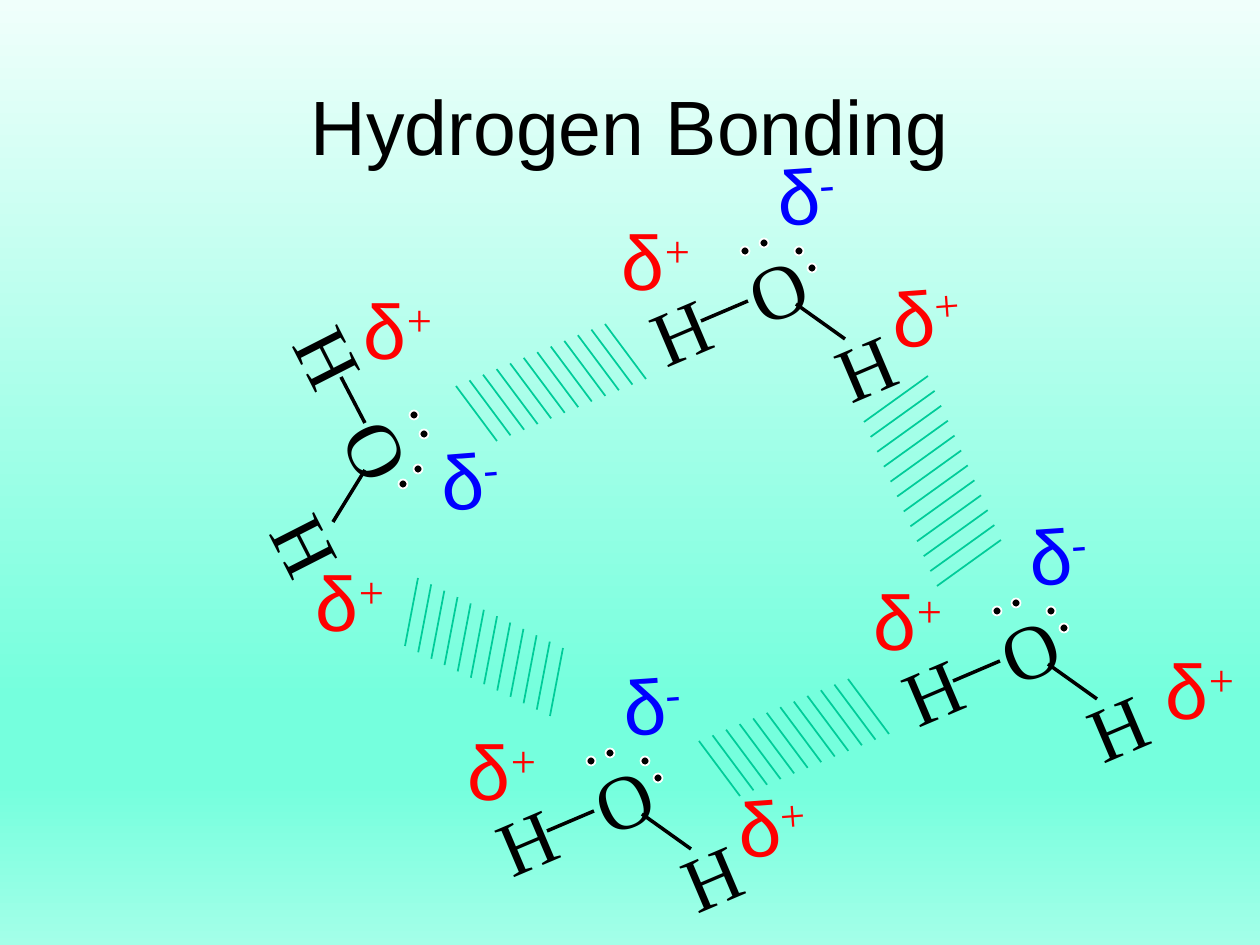
"""Build a slide on hydrogen bonding between four water molecules."""
from dataclasses import dataclass

from pptx import Presentation
from pptx import util as u
from pptx.dml.color import RGBColor
from pptx.enum import shapes, text
from pptx.oxml import ns
from pptx.oxml.xmlchemy import OxmlElement


@dataclass(frozen=True)
class Theme:
    """Colours, fonts and sizes used on the slide."""
    ink: str = "000000"
    halo: str = "FFFFFF"
    positive: str = "FF0000"
    negative: str = "0000FF"
    hydrogen_bond: str = "00CC99"
    backdrop: tuple = ((0, "F0FFFB"), (74, "75FFDD"), (83, "75FFDD"), (100, "A3FFE8"))
    sans: str = "Arial"
    serif: str = "Times New Roman"
    size: int = 44
    bond_width: int = 2
    thin_width: int = 1


THEME = Theme()
PX_PER_INCH = 126
STROKES = 12

WATER = {
    "atoms": [("H", 677, 331), ("H", 862, 367), ("O", 774, 290)],
    "turn": 337,
    "bonds": [(701, 321, 748, 301), (796, 304, 845, 339)],
    "dots": [(745, 251), (764, 243), (799, 251), (812, 268)],
    "charges": [("+", 657, 260, 0), ("-", 812, 194, 356), ("+", 927, 316, 355.8)],
}
LEFT_WATER = {
    "atoms": [("H", 329, 353), ("H", 306, 541), ("O", 377, 446)],
    "turn": 63,
    "bonds": [(341, 377, 365, 423), (365, 470, 333, 522)],
    "dots": [(414, 415), (424, 434), (418, 469), (403, 484)],
    "charges": [("+", 399, 329, 0), ("-", 476, 479, 355.4), ("+", 351, 601, 0)],
}
RIGHT_WATER = {**WATER, "charges": [*WATER["charges"][:2], ("+", 949, 329, 0)]}

MOLECULES = [
    (LEFT_WATER, 0, 0),
    (WATER, 0, 0),
    (RIGHT_WATER, 252, 360),
    (WATER, -154, 510),
]
HYDROGEN_BONDS = [
    ((605, 324), (456, 386), (41, 55)),
    ((864, 422), (937, 586), (64, -46)),
    ((563, 648), (418, 578), (-13, 68)),
    ((848, 679), (699, 741), (41, 55)),
]


def px(length):
    """Turn pixels into EMU."""
    return u.Emu(round(length * 914400 / PX_PER_INCH))


def style(font, face, colour):
    """Set face, size and colour of a font."""
    font.name, font.size = face, u.Pt(THEME.size)
    font.color.rgb = RGBColor.from_string(colour)


def paint_background(page):
    """Fill the page with the vertical gradient."""
    fill = page.background.fill
    fill.gradient()
    fill.gradient_angle = 270
    stops = page.element.find(".//" + ns.qn("a:gsLst"))
    for stop in list(stops):
        stops.remove(stop)
    for percent, colour in THEME.backdrop:
        stop, value = OxmlElement("a:gs"), OxmlElement("a:srgbClr")
        stop.set("pos", str(percent * 1000))
        value.set("val", colour)
        stop.append(value)
        stops.append(stop)


def set_title(page, words):
    """Place and format the title."""
    title = page.shapes.title
    title.left, title.top, title.width, title.height = map(px, (82, 72, 1096, 106))
    title.text_frame.text = words
    title.text_frame.vertical_anchor = text.MSO_ANCHOR.MIDDLE
    para = title.text_frame.paragraphs[0]
    para.alignment = text.PP_ALIGN.CENTER
    style(para.font, THEME.sans, THEME.ink)


def add_label(group, x, y, width, turn):
    """Add a turned text box centred on a point and return its paragraph."""
    height = 106
    box = group.shapes.add_textbox(
        px(x - width / 2), px(y - height / 2), px(width), px(height))
    box.rotation = turn
    box.text_frame.word_wrap = True
    box.text_frame.auto_size = text.MSO_AUTO_SIZE.SHAPE_TO_FIT_TEXT
    return box.text_frame.paragraphs[0]


def add_atom(group, symbol, x, y, turn):
    """Add the letter of an atom."""
    para = add_label(group, x, y, 73, turn)
    para.add_run().text = symbol
    style(para.font, THEME.serif, THEME.ink)


def add_charge(group, sign, x, y, turn):
    """Add a partial charge with a raised sign."""
    para = add_label(group, x, y, 95, turn)
    colour = THEME.positive if sign == "+" else THEME.negative
    for letter, face in (("δ", THEME.sans), (sign, THEME.serif)):
        span = para.add_run()
        span.text = letter
        style(span.font, face, colour)
    span.font._element.set("baseline", "30000")


def add_line(group, start, end, colour, width):
    """Add a straight line without a shadow."""
    line = group.shapes.add_connector(
        shapes.MSO_CONNECTOR.STRAIGHT, *map(px, (*start, *end)))
    line.line.color.rgb = RGBColor.from_string(colour)
    line.line.width = u.Pt(width)
    line._element.spPr.append(OxmlElement("a:effectLst"))


def add_dot(group, x, y):
    """Add one electron of a lone pair."""
    size = 9
    dot = group.shapes.add_shape(
        shapes.MSO_SHAPE.OVAL, px(x - size / 2), px(y - size / 2), px(size), px(size))
    dot.shadow.inherit = False
    dot.fill.solid()
    dot.fill.fore_color.rgb = RGBColor.from_string(THEME.ink)
    dot.line.color.rgb = RGBColor.from_string(THEME.halo)
    dot.line.width = u.Pt(THEME.thin_width)


def add_molecule(page, layout, dx, dy):
    """Add a water molecule, shifted from its layout."""
    group = page.shapes.add_group_shape()
    for symbol, x, y in layout["atoms"]:
        add_atom(group, symbol, x + dx, y + dy, layout["turn"])
    for x1, y1, x2, y2 in layout["bonds"]:
        add_line(group, (x1 + dx, y1 + dy), (x2 + dx, y2 + dy),
                 THEME.ink, THEME.bond_width)
    for x, y in layout["dots"]:
        add_dot(group, x + dx, y + dy)
    for sign, x, y, turn in layout["charges"]:
        add_charge(group, sign, x + dx, y + dy, turn)


def add_hydrogen_bond(page, first, last, stroke):
    """Add a band of evenly spaced parallel strokes."""
    group = page.shapes.add_group_shape()
    for index in range(STROKES):
        share = index / (STROKES - 1)
        start = [a + (b - a) * share for a, b in zip(first, last)]
        end = [a + d for a, d in zip(start, stroke)]
        add_line(group, start, end, THEME.hydrogen_bond, THEME.thin_width)


def main():
    """Build and save the deck."""
    deck = Presentation()
    deck.slide_width, deck.slide_height = px(1260), px(945)
    page = deck.slides.add_slide(deck.slide_layouts[5])
    paint_background(page)
    set_title(page, "Hydrogen Bonding")
    for molecule in MOLECULES:
        add_molecule(page, *molecule)
    for band in HYDROGEN_BONDS:
        add_hydrogen_bond(page, *band)
    deck.save("out.pptx")


if __name__ == "__main__":
    main()
